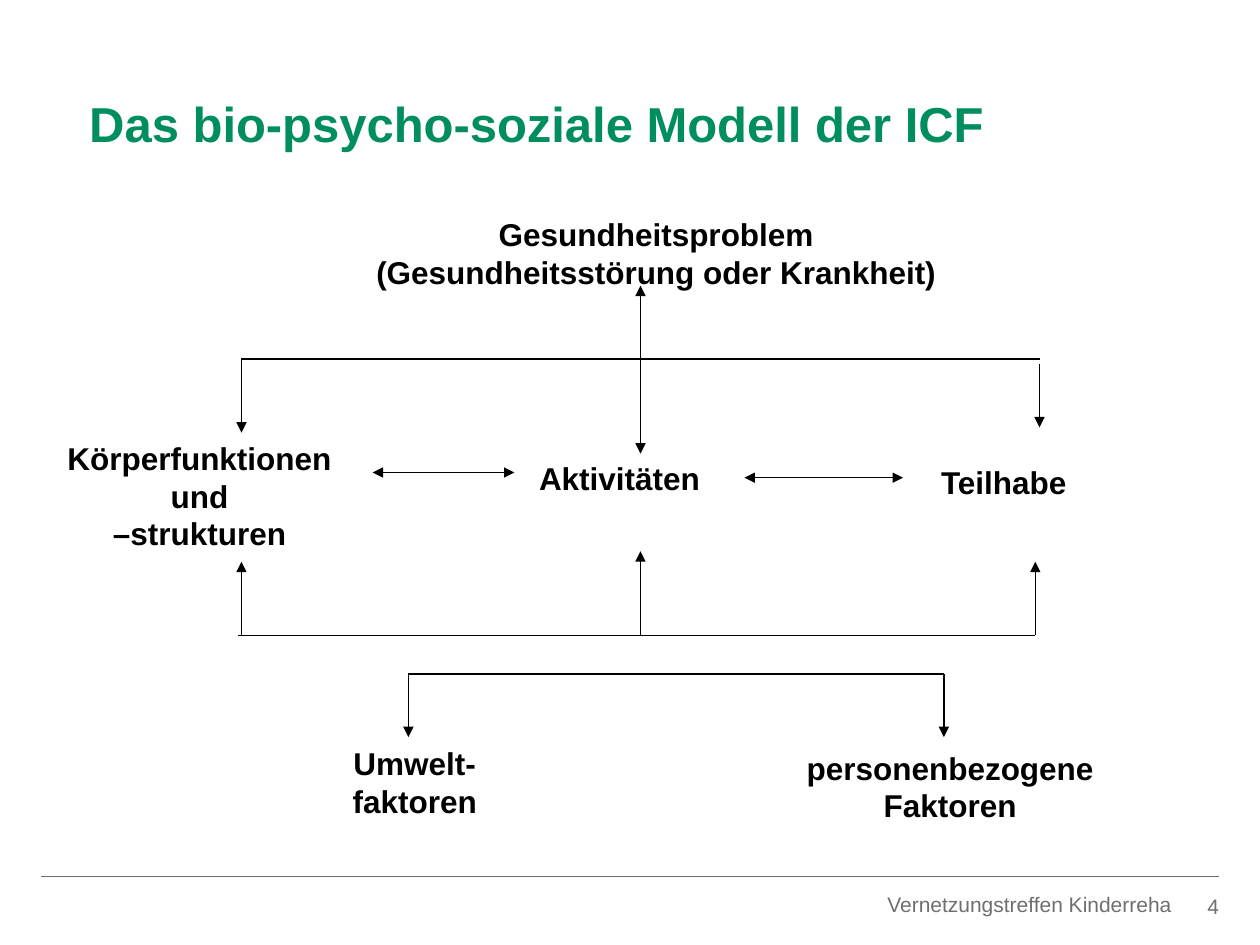
from lxml.etree import SubElement
from pptx import Presentation
from pptx.dml.color import RGBColor
from pptx.enum.shapes import MSO_CONNECTOR
from pptx.enum.text import MSO_ANCHOR, PP_ALIGN
from pptx.oxml.ns import qn
from pptx.util import Inches, Pt

COLORS = {"title": "008E5C", "text": "000000", "footer": "6F6F6F"}

presentation = Presentation()
presentation.slide_width = Inches(10)
presentation.slide_height = Inches(7.5)
slide = presentation.slides.add_slide(presentation.slide_layouts[5])

# The slide is a grid of 120 columns and 90 rows.
COLUMN = presentation.slide_width / 120
ROW = presentation.slide_height / 90


def put_text(text, left, top, width, height, shape=None, size=18, color="text",
             bold=True, align=PP_ALIGN.CENTER, inset=(0.1, 0.05), spacing=None):
    """Write one paragraph per line of text, in a given shape or a new text box."""
    box = [int(left * COLUMN), int(top * ROW), int(width * COLUMN), int(height * ROW)]
    if shape is None:
        shape = slide.shapes.add_textbox(*box)
    shape.left, shape.top, shape.width, shape.height = box
    frame = shape.text_frame
    frame.word_wrap = True
    frame.vertical_anchor = MSO_ANCHOR.TOP
    frame.margin_left = frame.margin_right = Inches(inset[0])
    frame.margin_top = frame.margin_bottom = Inches(inset[1])
    frame.text = text
    for paragraph in frame.paragraphs:
        paragraph.alignment = align
        paragraph.line_spacing = spacing
        for run in paragraph.runs:
            run.font.name = "Arial"
            run.font.size = Pt(size)
            run.font.bold = bold
            run.font.color.rgb = RGBColor.from_string(COLORS[color])


def put_line(x1, y1, x2, y2, arrow=False, color="text"):
    line = slide.shapes.add_connector(
        MSO_CONNECTOR.STRAIGHT,
        int(x1 * COLUMN), int(y1 * ROW), int(x2 * COLUMN), int(y2 * ROW))
    line.line.width = Pt(0.75)
    line.line.color.rgb = RGBColor.from_string(COLORS[color])
    if arrow:
        SubElement(line.line._get_or_add_ln(), qn("a:tailEnd"), type="triangle")
    SubElement(line._element.spPr, qn("a:effectLst"))


# Title and footer
put_text("Das bio-psycho-soziale Modell der ICF", 8.5, 9.5, 101.2, 10.4,
         shape=slide.shapes.title, size=28, color="title",
         align=PP_ALIGN.LEFT, inset=(0, 0), spacing=Pt(30))
put_line(3.9, 83.5, 116.1, 83.5, color="footer")
for text, left, top, width in [("4", 112.1, 85.1, 4),
                               ("Vernetzungstreffen Kinderreha", 60.6, 84.9, 51)]:
    put_text(text, left, top, width, 2.4, size=12, color="footer", bold=False,
             align=PP_ALIGN.RIGHT, inset=(0, 0))

# Components of the model
for text, left, top, width, height in [
    ("Gesundheitsproblem\n(Gesundheitsstörung oder Krankheit)", 28, 19.9, 69, 8.4),
    ("Körperfunktionen und\n–strukturen", 2.5, 41.2, 33, 15.7),
    ("Aktivitäten", 48, 43.1, 22, 4.8),
    ("Teilhabe", 85.1, 43.5, 21, 4.8),
    ("Umwelt-\nfaktoren", 28, 70.3, 23, 8.4),
    ("personenbezogene Faktoren", 72, 70.7, 37, 8.4),
]:
    put_text(text, left, top, width, height)

# Brackets: a horizontal bar, and arrows given as column, start row, end row
for left, right, bar, arrows in [
    (23, 99, 34.2, [(23, 34.2, 41.2), (99, 34.7, 40.7), (61, 34.2, 27.2), (61, 34.2, 43.2)]),
    (22.7, 98.6, 60.5, [(23, 60.5, 53.5), (98.6, 60.5, 53.5), (61, 60.5, 52.5)]),
    (38.9, 89.9, 64.2, [(38.9, 64.2, 70.2), (89.9, 64.2, 70.2)]),
]:
    put_line(left, bar, right, bar)
    for column, start, end in arrows:
        put_line(column, start, column, end, arrow=True)

# Two-way links between neighbours, drawn outwards from a shared middle
for left, middle, right, row in [(35.5, 42.5, 49, 45), (70.9, 74.5, 86, 45.5)]:
    for end in (left, right):
        put_line(middle, row, end, row, arrow=True)

presentation.save("out.pptx")
